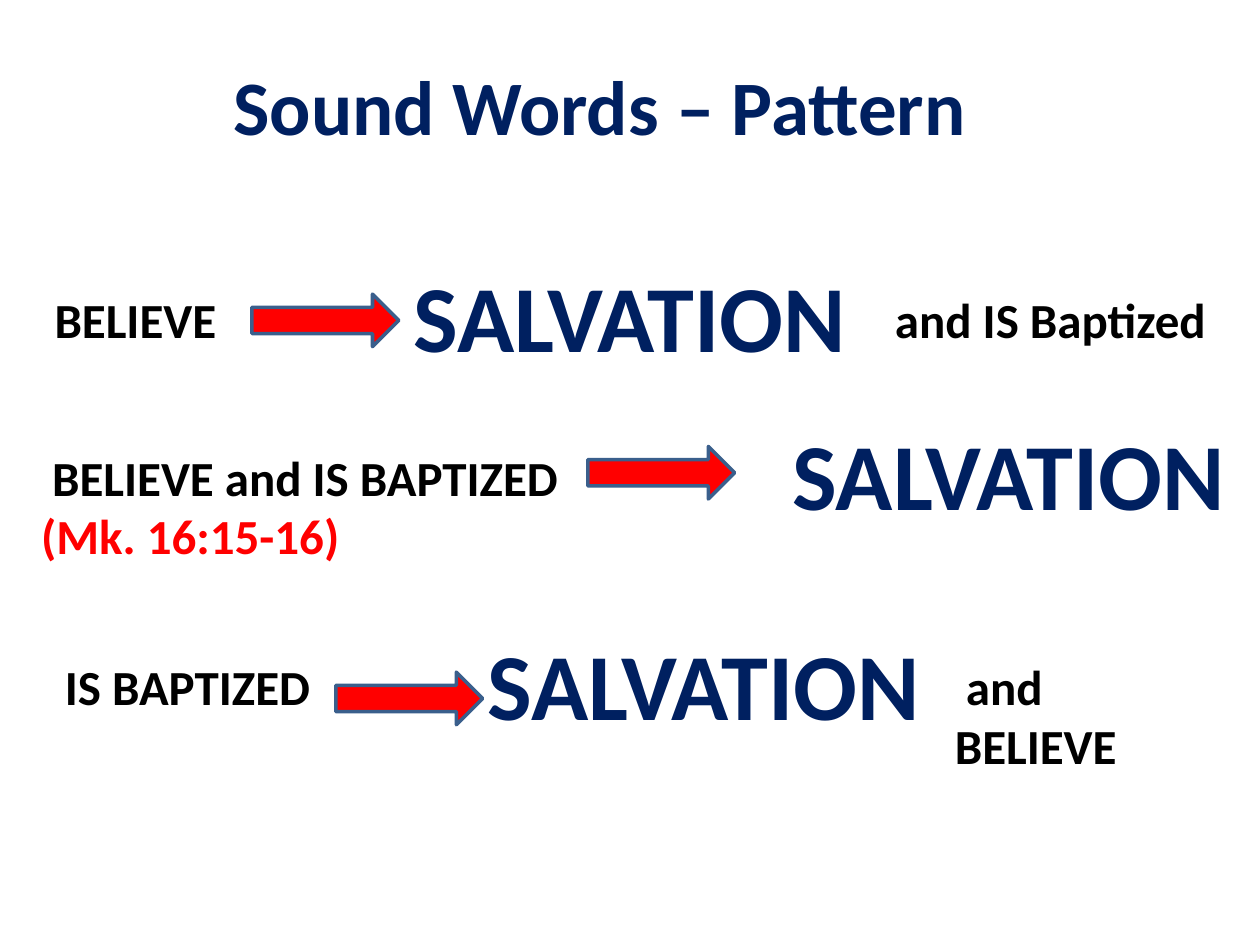
from pptx import Presentation
from pptx.dml.color import RGBColor
from pptx.enum.shapes import MSO_SHAPE
from pptx.enum.text import MSO_ANCHOR, MSO_AUTO_SIZE, PP_ALIGN
from pptx.util import Cm, Pt

COLORS = {"navy": "002060", "black": "000000", "red": "FF0000", "edge": "3A5F8C"}


def color(name):
    return RGBColor.from_string(COLORS[name])


def write(shape, box, *parts, size=28, hue="black", align=PP_ALIGN.LEFT, wrap=True):
    """Place a shape and fill it with bold runs; a part is text or (text, hue)."""
    shape.left, shape.top, shape.width, shape.height = map(Cm, box)
    frame = shape.text_frame
    frame.word_wrap = wrap
    frame.auto_size = MSO_AUTO_SIZE.NONE
    frame.vertical_anchor = MSO_ANCHOR.TOP
    para = frame.paragraphs[0]
    para.alignment = align
    for part in parts:
        text, tint = (part, hue) if isinstance(part, str) else part
        run = para.add_run()
        run.text = text
        run.font.name = "Calibri"
        run.font.size = Pt(size)
        run.font.bold = True
        run.font.color.rgb = color(tint)


prs = Presentation()
prs.slide_width, prs.slide_height = Cm(25.4), Cm(19.05)
slide = prs.slides.add_slide(prs.slide_layouts[5])
shapes = slide.shapes

write(shapes.title, (4.45, 1.06, 16.51, 2.14), "Sound Words – Pattern",
      size=44, hue="navy")

# Phrases before and after each arrow
phrases = [
    ((0.85, 5.72, 4.45, 1.45), ["BELIEVE"]),
    ((17.57, 5.72, 7.41, 1.45), [" and IS Baptized"]),
    ((0.58, 8.89, 12.07, 2.64),
     [" BELIEVE and IS BAPTIZED ", ("(Mk. 16:15-16)", "red")]),
    ((1.06, 13.12, 6.56, 1.45), ["IS BAPTIZED"]),
    ((19, 13.12, 5.72, 1.45), [" and BELIEVE"]),
]
for box, parts in phrases:
    write(shapes.add_textbox(0, 0, 0, 0), box, *parts)

# Each row: arrow left and top, then result left and top
rows = [
    (5.08, 5.93, 8.04, 5.08),
    (11.85, 9, 15.67, 8.26),
    (6.77, 13.55, 9.53, 12.49),
]
for left, top, end, high in rows:
    arrow = shapes.add_shape(MSO_SHAPE.RIGHT_ARROW, Cm(left), Cm(top), Cm(2.96), Cm(1.06))
    arrow.shadow.inherit = False
    arrow.fill.solid()
    arrow.fill.fore_color.rgb = color("red")
    arrow.line.color.rgb = color("edge")
    arrow.line.width = Pt(2)
    write(shapes.add_textbox(0, 0, 0, 0), (end, high, 9.32, 2.57), "SALVATION",
          size=54, hue="navy", align=PP_ALIGN.CENTER, wrap=False)

prs.save("out.pptx")
